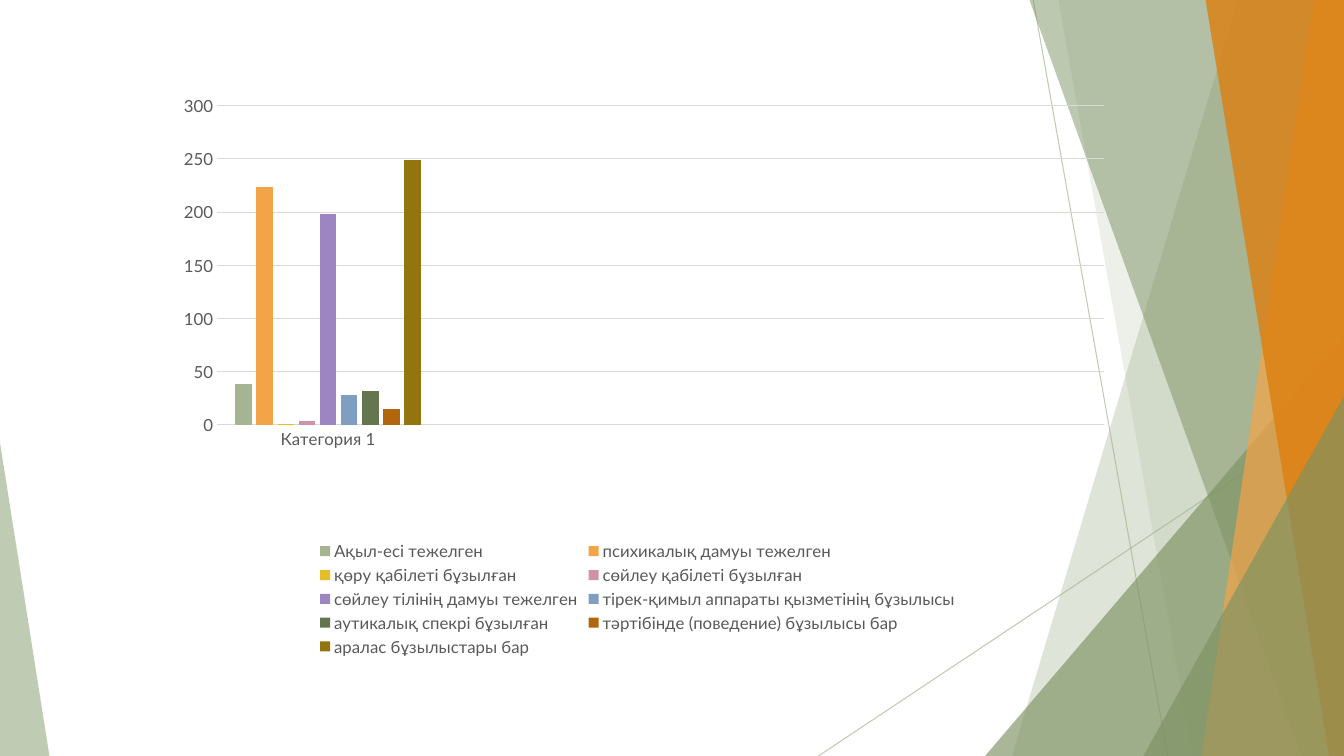
from dataclasses import dataclass

from lxml.etree import SubElement
from pptx import Presentation
from pptx.chart.data import CategoryChartData
from pptx.dml.color import RGBColor
from pptx.enum.chart import XL_CHART_TYPE as ChartType
from pptx.enum.chart import XL_LEGEND_POSITION as LegendPos
from pptx.enum.chart import XL_TICK_MARK as TickMark
from pptx.enum.shapes import MSO_CONNECTOR as Connector
from pptx.enum.shapes import MSO_SHAPE as Shape
from pptx.oxml import parse_xml
from pptx.oxml.ns import nsdecls, qn
from pptx.util import Inches, Pt


@dataclass(frozen=True)
class Theme:
    font: str = "Lato"
    label_size: int = 12
    hairline: float = 0.75
    text: str = "595959"
    grid: str = "D9D9D9"
    sage: str = "A5B592"
    moss: str = "7D9263"
    amber: str = "F3A447"
    orange: str = "DD7E0E"


THEME = Theme()
WIDTH, HEIGHT = Inches(13.33), Inches(7.5)
CATEGORIES = ["Категория 1", "", "", ""]
SERIES = [
    ("Ақыл-есі тежелген", 38, THEME.sage),
    ("психикалық дамуы тежелген", 224, THEME.amber),
    ("қөру қабілеті бұзылған", 1, "E7BC29"),
    ("сөйлеу қабілеті бұзылған", 4, "D092A7"),
    ("сөйлеу тілінің дамуы тежелген", 198, "9C85C0"),
    ("тірек-қимыл аппараты қызметінің бұзылысы", 28, "809EC2"),
    ("аутикалық спекрі бұзылған", 32, "64754F"),
    ("тәртібінде (поведение) бұзылысы бар", 15, "B1650C"),
    ("аралас бұзылыстары бар", 249, "937510"),
]
PLOT_AREA = {"x": 0.05, "y": 0.01, "w": 0.95, "h": 0.57}


def col(n):
    """Horizontal length on a grid of 100 columns."""
    return round(WIDTH * n / 100)


def row(n):
    """Vertical length on a grid of 100 rows."""
    return round(HEIGHT * n / 100)


def paint(fill, color, opacity=100):
    fill.solid()
    fill.fore_color.rgb = RGBColor.from_string(color)
    if opacity < 100:
        clr = fill._xPr.find(f".//{qn('a:srgbClr')}")
        SubElement(clr, qn("a:alpha")).set("val", str(opacity * 1000))


def style_facet(sp, color, opacity):
    sp.shadow.inherit = False
    sp.line.fill.background()
    paint(sp.fill, color, opacity)


def add_ray(slide, x1, y1, x2, y2):
    ray = slide.shapes.add_connector(
        Connector.STRAIGHT, col(x1), row(y1), col(x2), row(y2))
    ray.line.width = Pt(THEME.hairline)
    paint(ray.line.fill, THEME.sage, 70)
    SubElement(ray._element.spPr, qn("a:effectLst"))


def add_band(slide, top, bottom, color, opacity):
    """Full-height band from a slanted left edge to the slide's right edge."""
    builder = slide.shapes.build_freeform(col(top), 0, scale=1.0)
    builder.add_line_segments(
        [(WIDTH, 0), (WIDTH, HEIGHT), (col(bottom), HEIGHT)], close=True)
    style_facet(builder.convert_to_shape(), color, opacity)


def add_corner(slide, left, right, top, apex, color, opacity):
    """Triangle standing on the bottom edge; apex 0 is left, 1 is right."""
    sp = slide.shapes.add_shape(
        Shape.ISOSCELES_TRIANGLE, col(left), row(top),
        col(right - left), row(100 - top))
    sp.adjustments[0] = apex
    style_facet(sp, color, opacity)


def add_facets(slide):
    add_ray(slide, 76.88, 0, 86.88, 100)
    add_ray(slide, 100, 53.73, 60.9, 100)
    add_band(slide, 92.1, 75.3, THEME.sage, 36)
    add_band(slide, 78.75, 88.75, THEME.sage, 20)
    add_corner(slide, 73.3, 100, 44.4, 1, THEME.moss, 66)
    add_band(slide, 76.6, 96.85, THEME.moss, 50)
    add_band(slide, 97.75, 89.4, THEME.amber, 70)
    add_band(slide, 89.7, 98.87, THEME.orange, 80)
    add_corner(slide, 85.07, 100, 52.4, 1, THEME.moss, 66)
    add_corner(slide, 0, 3.68, 58.53, 0, THEME.sage, 70)


def style_rule(line):
    line.width = Pt(THEME.hairline)
    paint(line.fill, THEME.grid)


def style_axis(axis):
    axis.major_tick_mark = axis.minor_tick_mark = TickMark.NONE


def place_plot(chart):
    """Fix the inner plot area as shares of the chart frame."""
    modes = "".join(f'<c:{k}Mode val="edge"/>' for k in "xy")
    sizes = "".join(f'<c:{k} val="{v}"/>' for k, v in PLOT_AREA.items())
    plot_area = chart._chartSpace.chart.plotArea
    for old in plot_area.findall(qn("c:layout")):
        plot_area.remove(old)
    plot_area.insert(0, parse_xml(
        f'<c:layout {nsdecls("c")}><c:manualLayout>'
        f'<c:layoutTarget val="inner"/>{modes}{sizes}'
        '</c:manualLayout></c:layout>'))


def add_column_chart(slide, x, y, w, h):
    data = CategoryChartData()
    data.categories = CATEGORIES
    for name, value, _ in SERIES:
        data.add_series(name, [value, None, None, None])
    chart = slide.shapes.add_chart(
        ChartType.COLUMN_CLUSTERED, col(x), row(y), col(w), row(h), data).chart
    chart.has_title = False
    chart.font.name = THEME.font
    chart.font.size = Pt(THEME.label_size)
    chart.font.color.rgb = RGBColor.from_string(THEME.text)

    plot = chart.plots[0]
    plot.gap_width, plot.overlap = 219, -27
    plot.vary_by_categories = False
    for series, (_, _, color) in zip(plot.series, SERIES):
        paint(series.format.fill, color)

    cat_axis, val_axis = chart.category_axis, chart.value_axis
    style_axis(cat_axis)
    style_axis(val_axis)
    style_rule(cat_axis.format.line)
    val_axis.format.line.fill.background()
    style_rule(val_axis.major_gridlines.format.line)

    chart.has_legend = True
    chart.legend.position = LegendPos.BOTTOM
    chart.legend.include_in_layout = False
    place_plot(chart)


def main():
    prs = Presentation()
    prs.slide_width, prs.slide_height = WIDTH, HEIGHT
    slide = prs.slides.add_slide(prs.slide_layouts[6])
    add_facets(slide)
    add_column_chart(slide, 12.68, 12.67, 69.54, 74.67)
    prs.save("out.pptx")


if __name__ == "__main__":
    main()
